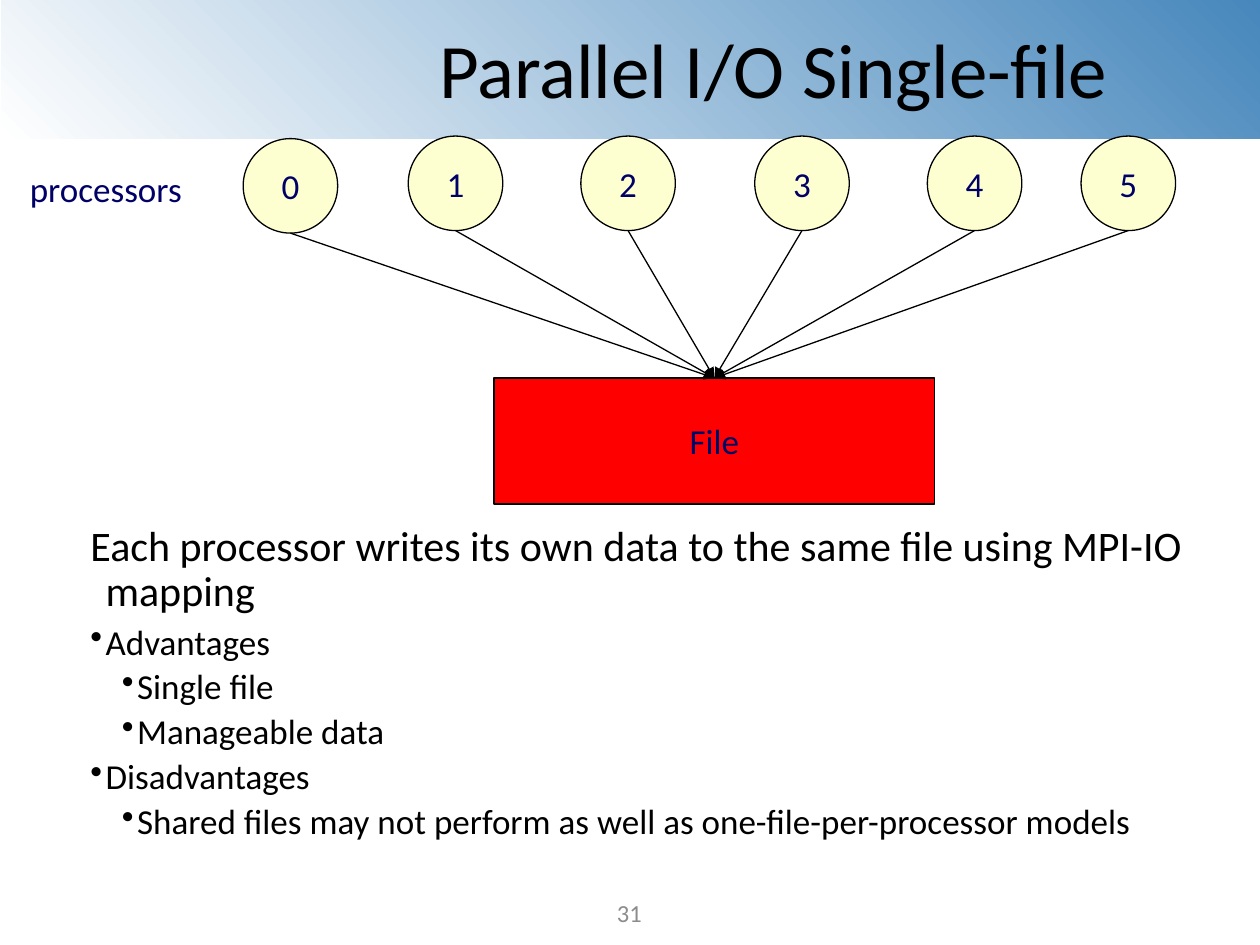
from lxml import etree
from pptx import Presentation
from pptx.dml.color import RGBColor
from pptx.enum import shapes, text
from pptx.oxml import parse_xml
from pptx.oxml.ns import nsdecls, qn
from pptx.util import Inches, Pt

THEME = {
    "font": "Calibri",
    "title": 44, "lead": 24, "body": 20, "number": 14, "line": 0.75,
    "black": "000000", "navy": "000066", "gray": "8C8C8C",
    "cream": "FEFFD1", "red": "FF0000", "blue": "4687BC", "white": "FFFFFF",
}

TITLE = "Parallel I/O Single-file "
PAGE = "31"
PROCESSORS = [  # label, left, top
    ("0", 1.93, 1.1), ("1", 3.24, 1.08), ("2", 4.61, 1.08),
    ("3", 5.99, 1.08), ("4", 7.36, 1.08), ("5", 8.58, 1.08),
]
DIAMETER = 0.75
FILE_BOX = (3.92, 3, 3.5, 1)
LEAD = [(1, "Each processor writes its own data to the same file using MPI-IO mapping")]
POINTS = [
    (1, "Advantages"),
    (2, "Single file"),
    (2, "Manageable data"),
    (1, "Disadvantages"),
    (2, "Shared files may not perform as well as one-file-per-processor models"),
]


def rgb(color):
    return RGBColor.from_string(THEME[color])


def place(shape, box):
    shape.left, shape.top, shape.width, shape.height = map(Inches, box)


def write(paragraph, words, size, color, align=text.PP_ALIGN.CENTER):
    paragraph.alignment = align
    run = paragraph.add_run()
    run.text = words
    run.font.name = THEME["font"]
    run.font.size = Pt(THEME[size])
    run.font.color.rgb = rgb(color)


def add_label(slide, box, words, size, color, anchor=text.MSO_ANCHOR.MIDDLE):
    label = slide.shapes.add_textbox(*map(Inches, box))
    label.text_frame.word_wrap = False
    label.text_frame.vertical_anchor = anchor
    write(label.text_frame.paragraphs[0], words, size, color)


def add_node(slide, kind, box, words, fill):
    node = slide.shapes.add_shape(kind, *map(Inches, box))
    node.shadow.inherit = False
    node.fill.solid()
    node.fill.fore_color.rgb = rgb(fill)
    node.line.color.rgb = rgb("black")
    node.line.width = Pt(THEME["line"])
    node.text_frame.word_wrap = False
    node.text_frame.vertical_anchor = text.MSO_ANCHOR.MIDDLE
    write(node.text_frame.paragraphs[0], words, "body", "navy")
    return node


def add_arrow(slide, source, source_site, target, target_site):
    arrow = slide.shapes.add_connector(shapes.MSO_CONNECTOR.STRAIGHT, 0, 0, 0, 0)
    arrow.begin_connect(source, source_site)
    arrow.end_connect(target, target_site)
    arrow.line.color.rgb = rgb("black")
    arrow.line.width = Pt(THEME["line"])
    etree.SubElement(arrow.line._get_or_add_ln(), qn("a:tailEnd"), type="triangle")
    etree.SubElement(arrow._element.spPr, qn("a:effectLst"))


def add_band(slide, box):
    """Header band whose colour radiates from its top right corner."""
    band = slide.shapes.add_shape(shapes.MSO_SHAPE.RECTANGLE, *map(Inches, box))
    band.shadow.inherit = False
    band.line.fill.background()
    stops = "".join(
        f'<a:gs pos="{position}"><a:srgbClr val="{THEME[color]}"/></a:gs>'
        for position, color in ((0, "blue"), (100000, "white")))
    band._element.spPr.find(qn("a:prstGeom")).addnext(parse_xml(
        f'<a:gradFill {nsdecls("a")} rotWithShape="1"><a:gsLst>{stops}</a:gsLst>'
        '<a:path path="circle"><a:fillToRect l="100000" b="100000"/></a:path>'
        '</a:gradFill>'))


def add_paragraphs(slide, box, items, size, bullet=None):
    frame = slide.shapes.add_textbox(*map(Inches, box)).text_frame
    frame.word_wrap = True
    for index, (level, words) in enumerate(items):
        paragraph = frame.add_paragraph() if index else frame.paragraphs[0]
        properties = paragraph._p.get_or_add_pPr()
        properties.set("marL", str(Inches(0.25 * level)))
        properties.set("indent", str(Inches(-0.12)))
        if bullet:
            etree.SubElement(properties, qn("a:buChar"), char=bullet)
        paragraph.level = level
        paragraph.line_spacing = 0.9
        if index:
            paragraph.space_before = Pt(0.2 * THEME[size])
        write(paragraph, words, size, "black", text.PP_ALIGN.LEFT)


def main():
    deck = Presentation()
    deck.slide_width, deck.slide_height = Inches(10), Inches(7.5)
    slide = deck.slides.add_slide(deck.slide_layouts[5])

    add_band(slide, (0.01, 0, 10, 1.1))
    title = slide.shapes.title
    slide.shapes._spTree.append(title._element)  # in front of the band
    place(title, (2.5, 0.12, 7.42, 0.84))
    title.text_frame.vertical_anchor = text.MSO_ANCHOR.MIDDLE
    write(title.text_frame.paragraphs[0], TITLE, "title", "black")

    processors = [
        add_node(slide, shapes.MSO_SHAPE.OVAL, (left, top, DIAMETER, DIAMETER), label, "cream")
        for label, left, top in PROCESSORS]
    file_box = add_node(slide, shapes.MSO_SHAPE.RECTANGLE, FILE_BOX, "File", "red")
    for processor in processors:
        # python-pptx places ends on sites 0-3; an oval's own bottom site is 4
        add_arrow(slide, processor, 2, file_box, 0)
        start = slide.shapes[-1]._element.find(".//" + qn("a:stCxn"))
        start.set("idx", "4")

    add_label(slide, (0.13, 1.28, 1.42, 0.44), "processors", "body", "navy")
    add_paragraphs(slide, (0.49, 4.12, 9, 1.1), LEAD, "lead")
    add_paragraphs(slide, (0.49, 4.91, 9, 2.04), POINTS, "body", "•")
    add_label(slide, (3.83, 7.08, 2.33, 0.33), PAGE, "number", "gray", text.MSO_ANCHOR.TOP)
    deck.save("out.pptx")


if __name__ == "__main__":
    main()
